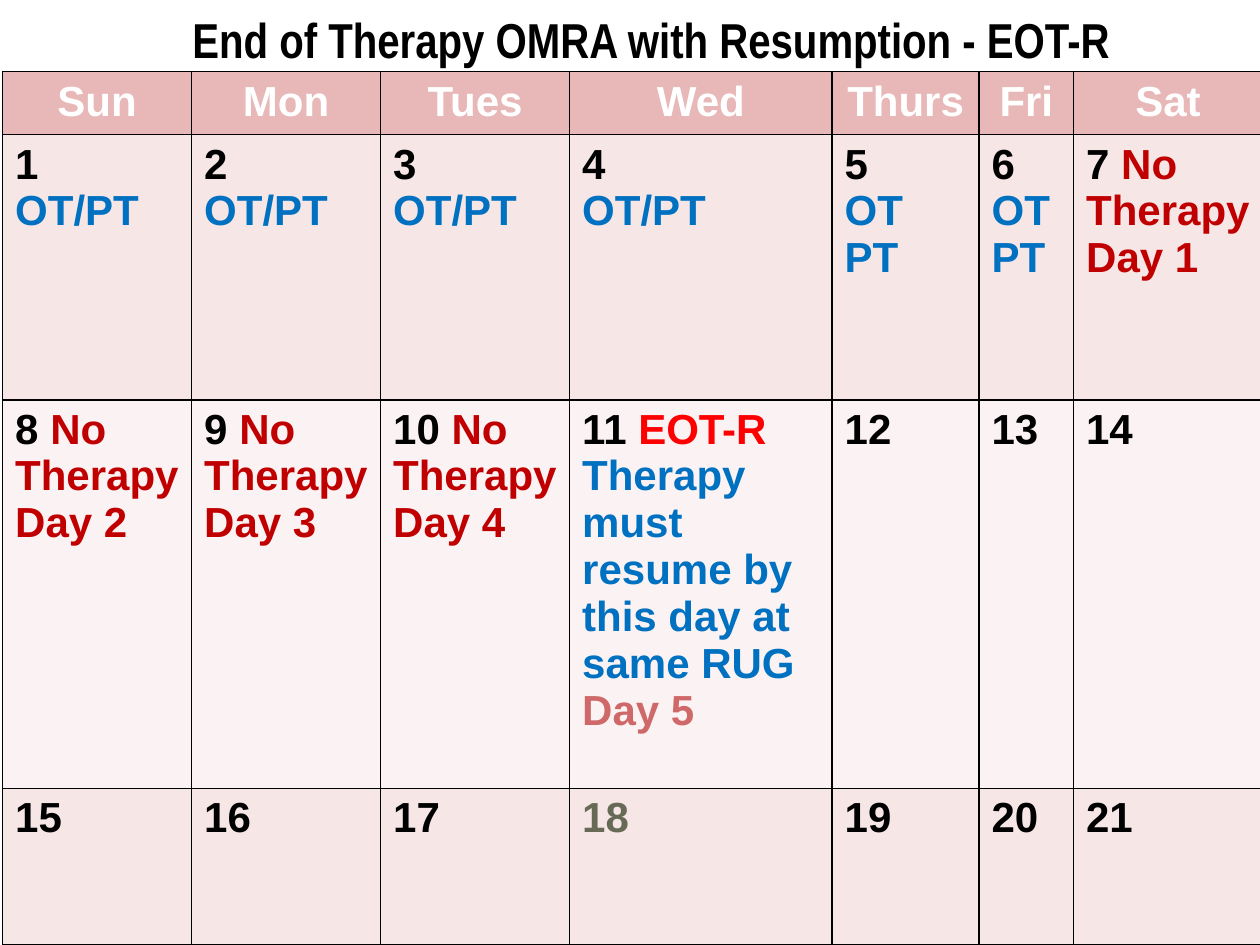
"""Build a one-slide therapy calendar for the End of Therapy OMRA with Resumption."""
from dataclasses import dataclass

from lxml import etree
from pptx import Presentation
from pptx.dml.color import RGBColor
from pptx.enum.text import MSO_ANCHOR, MSO_AUTO_SIZE, PP_ALIGN
from pptx.oxml.ns import qn
from pptx.util import Pt

CENTER, LEFT = PP_ALIGN.CENTER, PP_ALIGN.LEFT
MIDDLE = MSO_ANCHOR.MIDDLE
NO_AUTOFIT = MSO_AUTO_SIZE.NONE

BLACK = RGBColor(0x00, 0x00, 0x00)
WHITE = RGBColor(0xFF, 0xFF, 0xFF)
BLUE = RGBColor(0x00, 0x70, 0xC0)
DARK_RED = RGBColor(0xC0, 0x00, 0x00)
RED = RGBColor(0xFF, 0x00, 0x00)
ROSE = RGBColor(0xCF, 0x68, 0x68)
OLIVE = RGBColor(0x67, 0x6A, 0x55)
HEADER_FILL = RGBColor(0xE8, 0xB7, 0xB7)
ODD_FILL = RGBColor(0xF6, 0xE6, 0xE6)
EVEN_FILL = RGBColor(0xFB, 0xF3, 0xF3)

TITLE = "End of Therapy OMRA with Resumption - EOT-R"
WEEKDAYS = ("Sun", "Mon", "Tues", "Wed", "Thurs", "Fri", "Sat")
COLUMN_WIDTHS = (108, 108, 108, 150, 84, 54, 108)
ROW_HEIGHTS = (36, 151.5, 222, 89.5)


@dataclass(frozen=True)
class Note:
    text: str
    color: RGBColor


@dataclass(frozen=True)
class Day:
    beside: Note | None = None
    below: tuple[Note, ...] = ()
    color: RGBColor = BLACK


BOTH_THERAPIES = Day(below=(Note("OT/PT", BLUE),))
SPLIT_THERAPIES = Day(below=(Note("OT", BLUE), Note("PT", BLUE)))
RESUMPTION = Day(
    beside=Note("EOT-R", RED),
    below=(
        Note("Therapy must resume by this day at same RUG", BLUE),
        Note("Day 5", ROSE),
    ),
)
DAYS = {
    **dict.fromkeys(range(1, 5), BOTH_THERAPIES),
    **dict.fromkeys((5, 6), SPLIT_THERAPIES),
    **{
        6 + count: Day(beside=Note(f"No Therapy Day {count}", DARK_RED))
        for count in range(1, 5)
    },
    11: RESUMPTION,
    18: Day(color=OLIVE),
}


def add_text(paragraph, text: str, *, color: RGBColor = BLACK, size: float = 24,
             font: str = "Arial", align: PP_ALIGN = LEFT) -> None:
    paragraph.alignment = align
    run = paragraph.add_run()
    run.text = text
    run.font.name = font
    run.font.size = Pt(size)
    run.font.bold = True
    run.font.color.rgb = color


def format_cell(cell, fill: RGBColor) -> None:
    properties = cell._tc.get_or_add_tcPr()
    for side in ("a:lnL", "a:lnR", "a:lnT", "a:lnB"):
        line = etree.SubElement(properties, qn(side), w=str(Pt(1)))
        solid = etree.SubElement(line, qn("a:solidFill"))
        etree.SubElement(solid, qn("a:srgbClr"), val=str(BLACK))
    cell.fill.solid()
    cell.fill.fore_color.rgb = fill


def fill_day(cell, number: int, day: Day) -> None:
    paragraph = cell.text_frame.paragraphs[0]
    label = f"{number} " if day.beside else str(number)
    add_text(paragraph, label, color=day.color)
    if day.beside:
        add_text(paragraph, day.beside.text, color=day.beside.color)
    for note in day.below:
        add_text(cell.text_frame.add_paragraph(), note.text, color=note.color)


def add_title(slide) -> None:
    title = slide.shapes.title
    title.left, title.top, title.width, title.height = Pt(48), Pt(2), Pt(648), Pt(41)
    frame = title.text_frame
    frame.word_wrap = True
    frame.auto_size = NO_AUTOFIT
    frame.vertical_anchor = MIDDLE
    add_text(frame.paragraphs[0], TITLE, size=28, font="Arial Narrow", align=CENTER)


def add_calendar(slide) -> None:
    table = slide.shapes.add_table(
        len(ROW_HEIGHTS), len(WEEKDAYS), Pt(1.5), Pt(41),
        Pt(sum(COLUMN_WIDTHS)), Pt(sum(ROW_HEIGHTS)),
    ).table
    table.horz_banding = False
    for column, width in zip(table.columns, COLUMN_WIDTHS):
        column.width = Pt(width)
    for row, height in zip(table.rows, ROW_HEIGHTS):
        row.height = Pt(height)

    for column, weekday in enumerate(WEEKDAYS):
        header = table.cell(0, column)
        format_cell(header, HEADER_FILL)
        add_text(header.text_frame.paragraphs[0], weekday, color=WHITE, align=CENTER)
        for week in range(1, len(ROW_HEIGHTS)):
            cell = table.cell(week, column)
            format_cell(cell, ODD_FILL if week % 2 else EVEN_FILL)
            number = (week - 1) * len(WEEKDAYS) + column + 1
            fill_day(cell, number, DAYS.get(number, Day()))


def main() -> None:
    presentation = Presentation()
    presentation.slide_width, presentation.slide_height = Pt(720), Pt(540)
    slide = presentation.slides.add_slide(presentation.slide_layouts[5])
    add_calendar(slide)
    add_title(slide)
    presentation.save("out.pptx")


if __name__ == "__main__":
    main()
